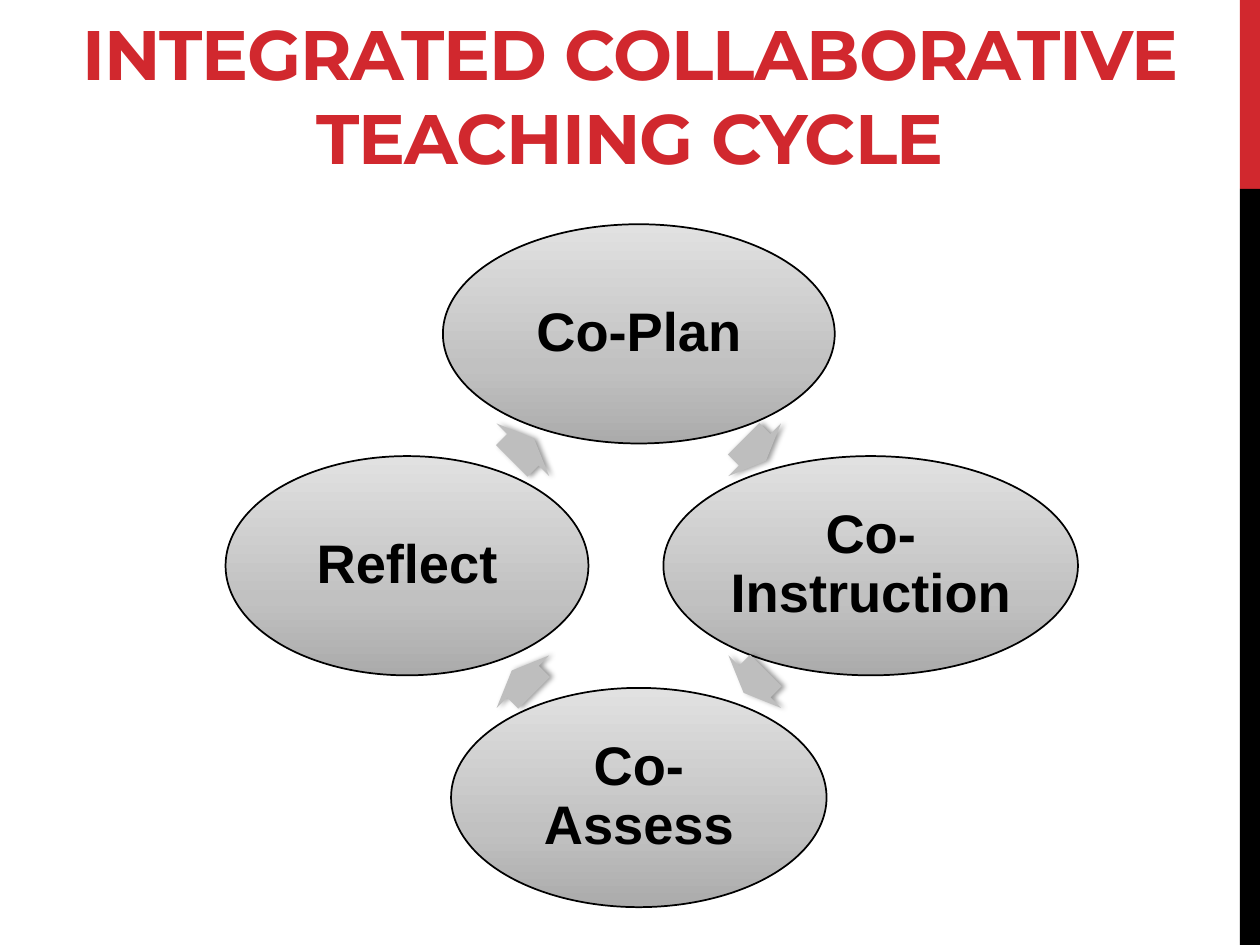
from dataclasses import dataclass
from math import cos, radians, sin

from lxml.etree import SubElement
from pptx import Presentation
from pptx.dml.color import RGBColor
from pptx.enum.shapes import MSO_SHAPE
from pptx.enum.text import MSO_ANCHOR, MSO_AUTO_SIZE, PP_ALIGN
from pptx.oxml import parse_xml
from pptx.oxml.ns import nsdecls, qn
from pptx.util import Inches, Pt

COLORS = {
    "red": "D1282E",
    "black": "000000",
    "arrow": "BEBEBE",
    "dark": "ABABAB",
    "middle": "C1C1C1",
    "light": "E1E1E1",
}
CENTER_X, CENTER_Y, RADIUS = 5.07, 4.49, 1.84
STAGE_HEIGHT = 1.74
ARROW_WIDTH, ARROW_HEIGHT = 0.25, 0.59


@dataclass
class Stage:
    label: str
    width: float


STAGES = [
    Stage("Co-Plan", 3.11),
    Stage("Co-Instruction", 3.29),
    Stage("Co-Assess", 2.98),
    Stage("Reflect", 2.88),
]


def rgb(name: str) -> RGBColor:
    return RGBColor.from_string(COLORS[name])


def add_shape(slide, kind, x: float, y: float, w: float, h: float):
    sp = slide.shapes.add_shape(kind, Inches(x), Inches(y), Inches(w), Inches(h))
    sp.shadow.inherit = False
    return sp


def add_filled(slide, kind, x: float, y: float, w: float, h: float, color: str):
    sp = add_shape(slide, kind, x, y, w, h)
    sp.fill.solid()
    sp.fill.fore_color.rgb = rgb(color)
    sp.line.fill.background()
    return sp


def set_gradient(sp) -> None:
    stops = "".join(
        f'<a:gs pos="{pos}"><a:srgbClr val="{COLORS[name]}"/></a:gs>'
        for pos, name in ((0, "dark"), (35000, "middle"), (100000, "light"))
    )
    sp._element.spPr.find(qn("a:prstGeom")).addnext(parse_xml(
        f'<a:gradFill {nsdecls("a")} rotWithShape="1"><a:gsLst>{stops}</a:gsLst>'
        '<a:lin ang="16200000" scaled="0"/></a:gradFill>'
    ))


def add_shadow(sp) -> None:
    effects = sp._element.spPr.find(qn("a:effectLst"))
    shadow = SubElement(effects, qn("a:outerShdw"), blurRad=str(Pt(3.1)),
                        dist=str(Pt(1.8)), dir="0", rotWithShape="0")
    color = SubElement(shadow, qn("a:srgbClr"), val=COLORS["black"])
    SubElement(color, qn("a:alpha"), val="40000")


def add_stage(slide, stage: Stage, angle: float) -> None:
    x = CENTER_X + RADIUS * sin(radians(angle))
    y = CENTER_Y - RADIUS * cos(radians(angle))
    sp = add_shape(slide, MSO_SHAPE.OVAL, x - stage.width / 2,
                   y - STAGE_HEIGHT / 2, stage.width, STAGE_HEIGHT)
    set_gradient(sp)
    sp.line.color.rgb = rgb("black")
    sp.line.width = Pt(1)
    tf = sp.text_frame
    tf.word_wrap = True
    tf.vertical_anchor = MSO_ANCHOR.MIDDLE
    tf.margin_left = tf.margin_right = tf.margin_top = tf.margin_bottom = Inches(0.04)
    p = tf.paragraphs[0]
    p.text = stage.label
    p.alignment = PP_ALIGN.CENTER
    p.line_spacing = 0.9
    p.font.name = "Arial"
    p.font.size = Pt(31)
    p.font.bold = True
    p.font.color.rgb = rgb("black")


def add_arrow(slide, angle: float) -> None:
    distance = RADIUS / 2 ** 0.5
    x = CENTER_X + distance * sin(radians(angle))
    y = CENTER_Y - distance * cos(radians(angle))
    sp = add_filled(slide, MSO_SHAPE.RIGHT_ARROW, x - ARROW_WIDTH / 2,
                    y - ARROW_HEIGHT / 2, ARROW_WIDTH, ARROW_HEIGHT, "arrow")
    sp.adjustments[0] = 0.6
    sp.adjustments[1] = 0.5
    sp.rotation = angle
    add_shadow(sp)


def set_title(slide, text: str) -> None:
    sp = slide.shapes.title
    sp.left, sp.top = Inches(0.25), Inches(0.69)
    sp.width, sp.height = Inches(9.5), Inches(0.78)
    tf = sp.text_frame
    tf.word_wrap = True
    tf.auto_size = MSO_AUTO_SIZE.NONE
    tf.vertical_anchor = MSO_ANCHOR.BOTTOM
    p = tf.paragraphs[0]
    p.alignment = PP_ALIGN.CENTER
    p.font.name = "Montserrat"
    p.font.size = Pt(40)
    p.font.bold = True
    p.font.color.rgb = rgb("red")
    r = p.add_run()
    r.text = text
    r.font._element.set("spc", "-60")


def main() -> None:
    prs = Presentation()
    prs.slide_width, prs.slide_height = Inches(10), Inches(7.5)
    s = prs.slides.add_slide(prs.slide_layouts[5])
    add_filled(s, MSO_SHAPE.RECTANGLE, 9.84, 0, 0.16, 1.5, "red")
    add_filled(s, MSO_SHAPE.RECTANGLE, 9.84, 1.5, 0.16, 6, "black")
    for i, stage in enumerate(STAGES):
        add_stage(s, stage, 90 * i)
        add_arrow(s, 90 * i + 45)
    set_title(s, "INTEGRATED COLLABORATIVE TEACHING CYCLE")
    prs.save("out.pptx")


if __name__ == "__main__":
    main()
